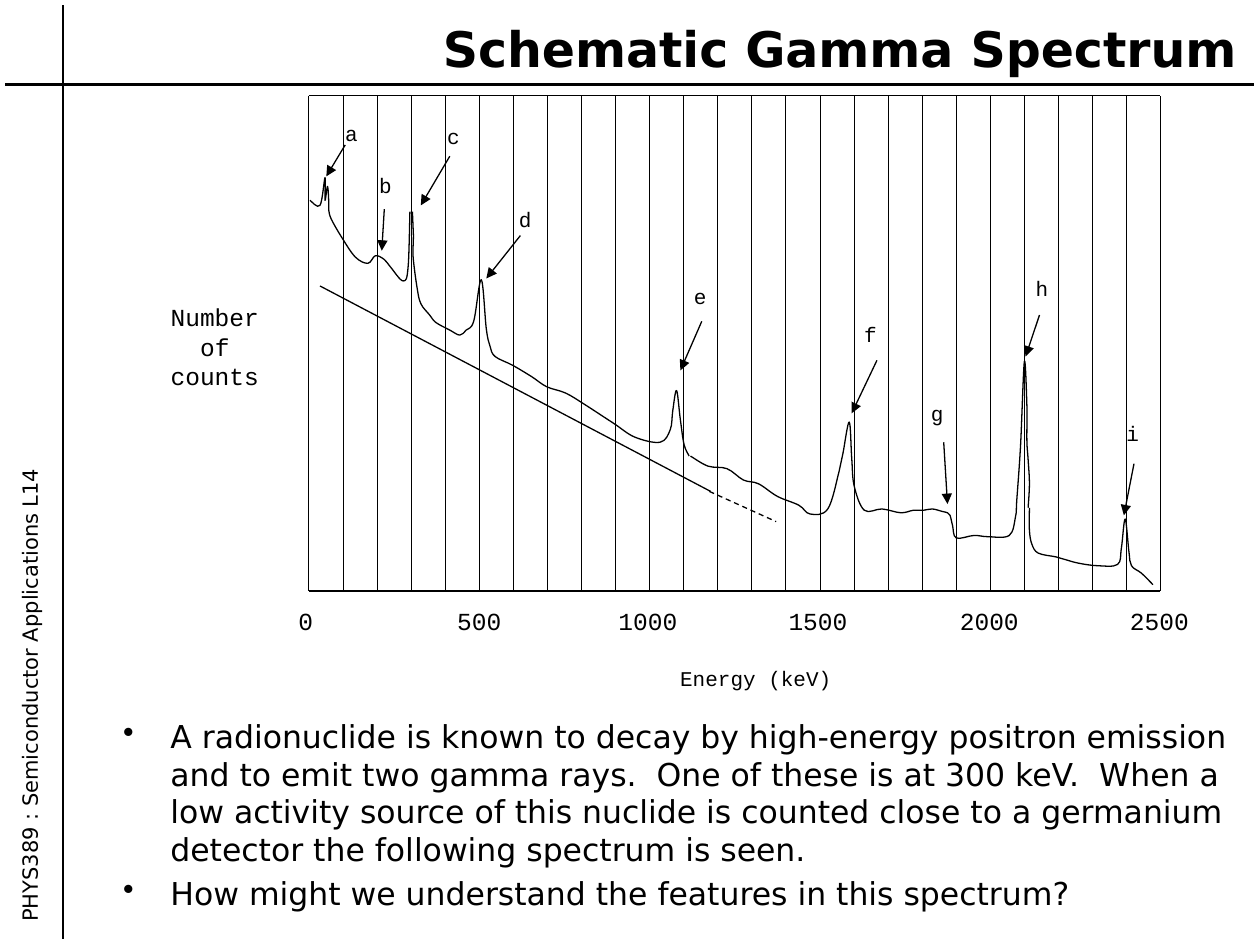
from dataclasses import dataclass

from lxml.etree import SubElement
from pptx import Presentation
from pptx.dml.color import RGBColor
from pptx.enum.dml import MSO_LINE
from pptx.enum.shapes import MSO_CONNECTOR, MSO_SHAPE
from pptx.enum.text import MSO_ANCHOR, PP_ALIGN
from pptx.oxml.ns import qn
from pptx.util import Cm, Pt


@dataclass(frozen=True)
class Theme:
    ink: RGBColor = RGBColor(0, 0, 0)
    paper: RGBColor = RGBColor(255, 255, 255)
    sans: str = "DejaVu Sans"
    mono: str = "Courier New"
    title: Pt = Pt(28)
    body: Pt = Pt(18)
    axis: Pt = Pt(14)
    small: Pt = Pt(12)
    rule: Pt = Pt(1.5)
    trace: Pt = Pt(0.75)
    grid: Pt = Pt(0.25)


THEME = Theme()
LEFT, TOP, RIGHT, BOTTOM = 2.45, 0.76, 9.21, 4.69
INTERVALS = 25

BULLETS = [
    "A radionuclide is known to decay by high-energy positron emission and to emit "
    "two gamma rays.  One of these is at 300 keV.  When a low activity source of this "
    "nuclide is counted close to a germanium detector the following spectrum is seen.",
    "How might we understand the features in this spectrum?",
]

ENERGY_TICKS = [
    ("0", 2.27, 0.4), ("500", 3.53, 0.59), ("1000", 4.81, 0.69),
    ("1500", 6.16, 0.68), ("2000", 7.52, 0.7), ("2500", 8.87, 0.7),
]

FEATURES = [
    ("a", (2.64, 0.91, 0.38, 0.31), (2.74, 1.15, 2.59, 1.4)),
    ("b", (2.91, 1.32, 0.39, 0.36), (3.05, 1.66, 3.03, 1.99)),
    ("c", (3.45, 0.93, 0.43, 0.36), (3.57, 1.24, 3.34, 1.63)),
    ("d", (4.02, 1.59, 0.41, 0.31), (4.13, 1.87, 3.86, 2.21)),
    ("e", (5.41, 2.2, 0.47, 0.36), (5.57, 2.55, 5.4, 2.94)),
    ("f", (6.76, 2.5, 0.41, 0.35), (6.96, 2.86, 6.76, 3.28)),
    ("g", (7.29, 3.13, 0.43, 0.36), (7.49, 3.51, 7.52, 4)),
    ("h", (8.12, 2.14, 0.41, 0.36), (8.25, 2.5, 8.14, 2.83)),
    ("i", (8.84, 3.29, 0.38, 0.36), (9, 3.68, 8.92, 4.09)),
]

LOW_ENERGY = [
    (2.46, 1.59), (2.54, 1.63), (2.58, 1.41), (2.58, 1.59), (2.6, 1.48), (2.61, 1.61),
    (2.61, 1.67), (2.63, 1.74), (2.71, 1.88), (2.82, 2.04), (2.92, 2.09), (2.98, 2.03),
    (3.05, 2.06), (3.1, 2.12), (3.2, 2.23), (3.24, 2.11), (3.26, 1.52), (3.28, 1.83),
    (3.28, 1.93), (3.28, 2.05), (3.31, 2.28), (3.34, 2.41), (3.41, 2.5), (3.46, 2.56),
    (3.57, 2.62), (3.65, 2.66), (3.7, 2.62), (3.76, 2.55), (3.82, 2.22), (3.86, 2.61),
    (3.89, 2.75), (3.93, 2.83), (4.07, 2.9), (4.22, 2.99), (4.34, 3.07), (4.49, 3.12),
    (4.64, 3.21), (4.87, 3.36), (5.04, 3.47), (5.24, 3.51), (5.32, 3.41), (5.34, 3.26),
    (5.37, 3.1), (5.4, 3.33), (5.43, 3.53), (5.47, 3.62),
]
MIDDLE_ENERGY = [
    (5.48, 3.62), (5.62, 3.7), (5.77, 3.72), (5.9, 3.81), (6.02, 3.84), (6.17, 3.94),
    (6.34, 4.01), (6.43, 4.08), (6.57, 4.04), (6.66, 3.74), (6.69, 3.6), (6.74, 3.35),
    (6.76, 3.64), (6.78, 3.86), (6.86, 4.05), (7, 4.04), (7.15, 4.07), (7.25, 4.05),
    (7.33, 4.05), (7.4, 4.04), (7.48, 4.06), (7.52, 4.07), (7.54, 4.09), (7.56, 4.17),
    (7.59, 4.27), (7.73, 4.25), (7.84, 4.26), (8.01, 4.25), (8.06, 4.1), (8.07, 3.97),
    (8.1, 3.53), (8.13, 2.87), (8.15, 3.22), (8.15, 3.5), (8.16, 3.65), (8.17, 3.84),
    (8.16, 4.03),
]
HIGH_ENERGY = [
    (8.17, 4.03), (8.17, 4.21), (8.19, 4.32), (8.24, 4.39), (8.38, 4.42), (8.45, 4.44),
    (8.56, 4.47), (8.71, 4.49), (8.87, 4.48), (8.9, 4.35), (8.93, 4.12), (8.96, 4.38),
    (8.98, 4.49), (9.06, 4.55), (9.15, 4.64),
]


def lengths(inches):
    return [Cm(value * 2.54) for value in inches]


def apply_format(target, values):
    for name, value in values.items():
        setattr(target, name, value)


def write_text(box, texts, font, paragraph=None):
    frame = box.text_frame
    frame.word_wrap = True
    for index, text in enumerate(texts):
        para = frame.paragraphs[0] if index == 0 else frame.add_paragraph()
        apply_format(para, {"alignment": PP_ALIGN.LEFT, **(paragraph or {})})
        span = para.add_run()
        span.text = text
        apply_format(span.font, font)
        span.font.color.rgb = THEME.ink
    return frame


def add_text(page, place, texts, font, paragraph=None):
    box = page.shapes.add_textbox(*lengths(place))
    write_text(box, texts, {"name": THEME.sans, **font}, paragraph)
    return box


def add_label(page, place, texts, size, paragraph=None):
    box = page.shapes.add_shape(MSO_SHAPE.RECTANGLE, *lengths(place))
    box.shadow.inherit = False
    box.fill.solid()
    box.fill.fore_color.rgb = THEME.paper
    box.line.fill.background()
    frame = write_text(box, texts, {"name": THEME.mono, "size": size}, paragraph)
    frame.vertical_anchor = MSO_ANCHOR.TOP


def add_line(page, ends, width, arrow=False, dash=None):
    line = page.shapes.add_connector(MSO_CONNECTOR.STRAIGHT, *lengths(ends))
    apply_format(line.line, {"width": width, "dash_style": dash})
    line.line.color.rgb = THEME.ink
    properties = line._element.spPr
    if arrow:
        SubElement(properties.find(qn("a:ln")), qn("a:tailEnd"), type="triangle")
    SubElement(properties, qn("a:effectLst"))


def round_corners(outline):
    knots = [(int(point.get("x")), int(point.get("y"))) for point in outline.iter(qn("a:pt"))]
    padded = [knots[0], *knots, knots[-1]]
    for segment in outline.findall(qn("a:lnTo")):
        outline.remove(segment)
    for before, start, end, after in zip(padded, padded[1:], padded[2:], padded[3:]):
        leaving = [s + (e - b) / 6 for b, s, e in zip(before, start, end)]
        arriving = [e - (a - s) / 6 for s, e, a in zip(start, end, after)]
        curve = SubElement(outline, qn("a:cubicBezTo"))
        for x, y in (leaving, arriving, end):
            SubElement(curve, qn("a:pt"), x=str(round(x)), y=str(round(y)))


def add_trace(page, points):
    start, *rest = [lengths(point) for point in points]
    builder = page.shapes.build_freeform(*start)
    builder.add_line_segments(rest, close=False)
    trace = builder.convert_to_shape()
    round_corners(next(trace._element.iter(qn("a:path"))))
    trace.shadow.inherit = False
    trace.fill.background()
    trace.line.color.rgb = THEME.ink
    trace.line.width = THEME.trace


def add_bullets(page):
    box = add_text(page, (0.88, 5.64, 9, 1.81), BULLETS, {"size": THEME.body},
                   {"space_before": Pt(3.6)})
    for para in box.text_frame.paragraphs:
        properties = para._p.get_or_add_pPr()
        properties.set("marL", str(Cm(0.95)))
        properties.set("indent", str(-Cm(0.95)))
        SubElement(properties, qn("a:buFontTx"))
        SubElement(properties, qn("a:buChar"), char="•")


def add_page_frame(page):
    add_line(page, (0.04, 0.67, 9.95, 0.67), THEME.rule)
    add_line(page, (0.5, 0.04, 0.5, 7.45), THEME.rule)
    course = add_text(page, (-3.04, 3.96, 6.58, 0.33),
                      ["PHYS389 : Semiconductor Applications L14"], {"size": THEME.small})
    course.rotation = 270
    title = add_text(page, (0.58, 0.17, 9.33, 0.42), ["Schematic Gamma Spectrum"],
                     {"size": THEME.title, "bold": True}, {"alignment": PP_ALIGN.RIGHT})
    title.text_frame.vertical_anchor = MSO_ANCHOR.MIDDLE


def add_spectrum(page):
    for text, left, width in ENERGY_TICKS:
        add_label(page, (left, 4.76, width, 0.31), [text], THEME.axis)
    add_label(page, (5.3, 5.23, 1.94, 0.41), ["Energy (keV)"], THEME.small)
    add_label(page, (1.14, 2.35, 1.13, 0.87), ["Number", "of", "counts"], THEME.axis,
              {"alignment": PP_ALIGN.CENTER})
    for points in (LOW_ENERGY, MIDDLE_ENERGY, HIGH_ENERGY):
        add_trace(page, points)
    for letter, place, _ in FEATURES:
        add_label(page, place, [letter], THEME.small)
    for _, _, ends in FEATURES:
        add_line(page, ends, THEME.trace, arrow=True)
    add_line(page, (2.54, 2.27, 5.64, 3.9), THEME.trace)
    add_line(page, (5.63, 3.9, 6.16, 4.14), THEME.trace, dash=MSO_LINE.DASH)
    for index in range(INTERVALS + 1):
        x = LEFT + index * (RIGHT - LEFT) / INTERVALS
        width = THEME.trace if index in (0, INTERVALS) else THEME.grid
        add_line(page, (x, BOTTOM, x, TOP), width)
    for y in (TOP, BOTTOM):
        add_line(page, (LEFT, y, RIGHT, y), THEME.trace)


def main():
    deck = Presentation()
    deck.slide_width, deck.slide_height = Cm(25.4), Cm(19.05)
    page = deck.slides.add_slide(deck.slide_layouts[6])
    add_page_frame(page)
    add_bullets(page)
    add_spectrum(page)
    deck.save("out.pptx")


if __name__ == "__main__":
    main()
